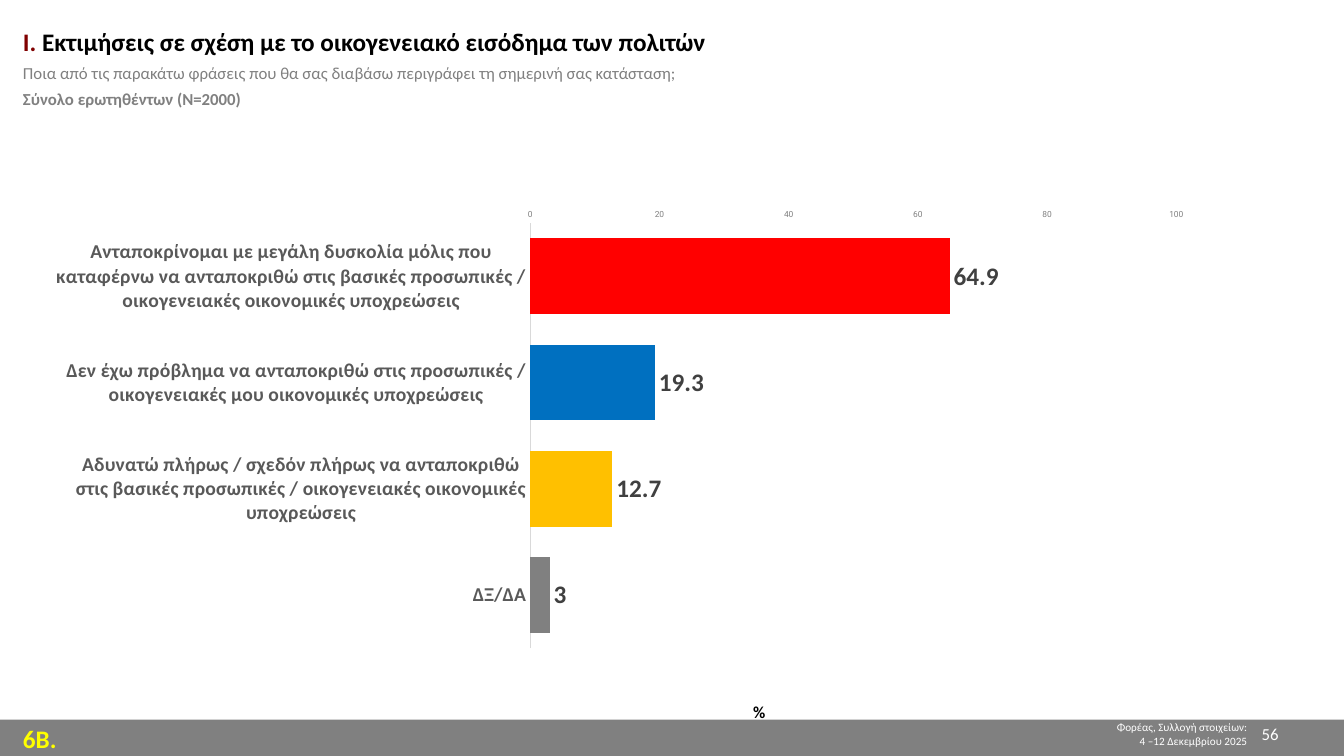
"""Build the slide on how households meet their financial obligations."""
from lxml import etree
from pptx import Presentation
from pptx.chart.data import CategoryChartData
from pptx.dml.color import RGBColor
from pptx.enum.chart import XL_CHART_TYPE, XL_LABEL_POSITION, XL_TICK_MARK
from pptx.enum.shapes import MSO_SHAPE
from pptx.enum.text import MSO_ANCHOR, PP_ALIGN
from pptx.oxml.ns import qn
from pptx.util import Inches, Pt

BAR_CLUSTERED = XL_CHART_TYPE.BAR_CLUSTERED
OUTSIDE_END = XL_LABEL_POSITION.OUTSIDE_END
NO_TICK = XL_TICK_MARK.NONE
RECTANGLE = MSO_SHAPE.RECTANGLE
TOP, MIDDLE = MSO_ANCHOR.TOP, MSO_ANCHOR.MIDDLE
LEFT, RIGHT = PP_ALIGN.LEFT, PP_ALIGN.RIGHT

BLACK = RGBColor(0x00, 0x00, 0x00)
WHITE = RGBColor(0xFF, 0xFF, 0xFF)
GREY = RGBColor(0x80, 0x80, 0x80)
LABEL_GREY = RGBColor(0x59, 0x59, 0x59)
VALUE_GREY = RGBColor(0x40, 0x40, 0x40)
AXIS_GREY = RGBColor(0xD9, 0xD9, 0xD9)
MAROON = RGBColor(0x80, 0x00, 0x00)
YELLOW = RGBColor(0xFF, 0xFF, 0x00)
RED = RGBColor(0xFF, 0x00, 0x00)
BLUE = RGBColor(0x00, 0x70, 0xC0)
AMBER = RGBColor(0xFF, 0xC0, 0x00)


def set_font(font, name, size, color, bold=False):
    font.name = name
    font.size = Pt(size)
    font.color.rgb = color
    font.bold = bold


def add_text(slide, box, paragraphs, align=LEFT, anchor=TOP, spacing=1.0, wrap=True):
    tf = slide.shapes.add_textbox(*[Inches(v) for v in box]).text_frame
    tf.word_wrap = wrap
    tf.vertical_anchor = anchor
    for i, runs in enumerate(paragraphs):
        p = tf.add_paragraph() if i else tf.paragraphs[0]
        p.alignment = align
        p.line_spacing = spacing
        for text, size, color, bold in runs:
            r = p.add_run()
            r.text = text
            set_font(r.font, "Calibri", size, color, bold)


prs = Presentation()
prs.slide_width = Inches(13.33)
prs.slide_height = Inches(7.5)
s = prs.slides.add_slide(prs.slide_layouts[6])

footer = s.shapes.add_shape(RECTANGLE, 0, Inches(7.14), prs.slide_width, Inches(0.37))
footer.shadow.inherit = False
footer.fill.solid()
footer.fill.fore_color.rgb = GREY
footer.line.fill.background()

add_text(s, (0.13, 7.13, 0.67, 0.4), [[("6Β.", 18, YELLOW, True)]])
add_text(s, (9.58, 7.1, 2.89, 0.37), [
    [("Φορέας, Συλλογή στοιχείων:", 8, WHITE, False)],
    [("4 –12 Δεκεμβρίου 2025", 8, WHITE, False)],
], align=RIGHT)
add_text(s, (0.13, 0, 13.2, 1.25), [
    [("I. ", 18, MAROON, True),
     ("Εκτιμήσεις σε σχέση με το οικογενειακό εισόδημα των πολιτών", 18, BLACK, True)],
    [("Ποια από τις παρακάτω φράσεις που θα σας διαβάσω περιγράφει τη σημερινή σας κατάσταση;",
      12, GREY, False)],
    [("Σύνολο ερωτηθέντων (N=2000)", 12, GREY, True)],
], anchor=MIDDLE, spacing=1.3)
add_text(s, (10, 7.13, 2.78, 0.37), [[("56", 12, WHITE, False)]], align=RIGHT)
add_text(s, (7.37, 6.91, 0.32, 0.3), [[("%", 12, BLACK, True)]], wrap=False)

answers = [
    ("Ανταποκρίνομαι με μεγάλη δυσκολία μόλις που καταφέρνω να ανταποκριθώ στις "
     "βασικές προσωπικές / οικογενειακές οικονομικές υποχρεώσεις", 64.9, RED),
    ("Δεν έχω πρόβλημα να ανταποκριθώ στις προσωπικές / οικογενειακές μου "
     "οικονομικές υποχρεώσεις", 19.3, BLUE),
    ("Αδυνατώ πλήρως / σχεδόν πλήρως να ανταποκριθώ στις βασικές προσωπικές / "
     "οικογενειακές οικονομικές υποχρεώσεις", 12.7, AMBER),
    ("ΔΞ/ΔΑ", 3, GREY),
]
data = CategoryChartData()
data.categories = [answer for answer, value, color in answers]
data.add_series("Series 1", [value for answer, value, color in answers])
chart = s.shapes.add_chart(BAR_CLUSTERED, Inches(0.55), Inches(1.55),
                           Inches(11.63), Inches(5.63), data).chart
chart.has_legend = False
chart.has_title = False
set_font(chart.font, "Roboto", 10, BLACK)

category_axis = chart.category_axis
category_axis.reverse_order = True
category_axis.major_tick_mark = NO_TICK
category_axis.format.line.color.rgb = AXIS_GREY
category_axis.format.line.width = Pt(0.75)
set_font(category_axis.tick_labels.font, "Calibri", 14, LABEL_GREY, True)

value_axis = chart.value_axis
value_axis.minimum_scale = 0
value_axis.maximum_scale = 100
value_axis.major_unit = 20
value_axis.has_major_gridlines = False
value_axis.major_tick_mark = NO_TICK
value_axis.format.line.fill.background()
set_font(value_axis.tick_labels.font, "Roboto", 6, GREY)

plot = chart.plots[0]
plot.vary_by_categories = False
plot.gap_width = 40
plot.overlap = -51
series = plot.series[0]
series.invert_if_negative = False
series.format.fill.solid()
series.format.fill.fore_color.rgb = GREY
for i, (answer, value, color) in enumerate(answers):
    fill = series.points[i].format.fill
    fill.solid()
    fill.fore_color.rgb = color
labels = series.data_labels
labels.show_value = True
labels.position = OUTSIDE_END
set_font(labels.font, "Calibri", 18, VALUE_GREY, True)

plot_area = chart.plots[0]._element.getparent()
for old_layout in plot_area.findall(qn("c:layout")):
    plot_area.remove(old_layout)
layout = etree.Element(qn("c:layout"))
manual = etree.SubElement(layout, qn("c:manualLayout"))
for tag, val in [("layoutTarget", "inner"), ("xMode", "edge"), ("yMode", "edge"),
                 ("x", "0.405"), ("y", "0.118"), ("w", "0.551"), ("h", "0.749")]:
    etree.SubElement(manual, qn("c:" + tag)).set("val", val)
plot_area.insert(0, layout)

prs.save("out.pptx")
